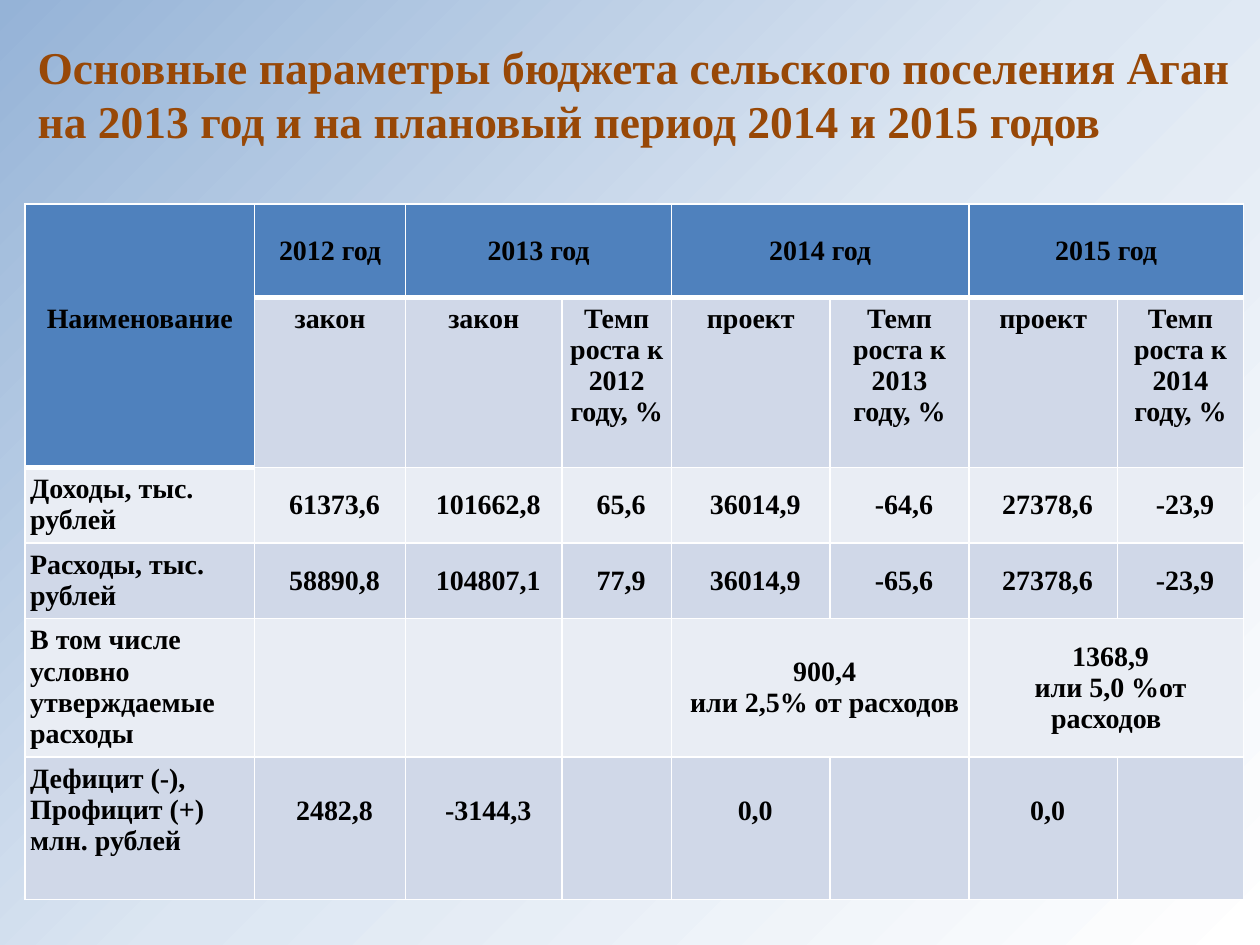
from dataclasses import dataclass

from lxml.etree import SubElement
from pptx import Presentation
from pptx.dml.color import RGBColor
from pptx.enum.text import MSO_ANCHOR, PP_ALIGN
from pptx.oxml import parse_xml
from pptx.oxml.ns import nsdecls, qn
from pptx.slide import Slide
from pptx.table import Table, _Cell
from pptx.text.text import TextFrame
from pptx.util import Inches, Pt

FONT = "Times New Roman"
WHITE = RGBColor(0xFF, 0xFF, 0xFF)
BLACK = RGBColor(0, 0, 0)
BROWN = RGBColor(0x98, 0x48, 0x07)
HEADER_BLUE = RGBColor(0x4F, 0x81, 0xBD)
BAND_DARK = RGBColor(0xD0, 0xD8, 0xE8)
BAND_LIGHT = RGBColor(0xE9, 0xED, 0xF4)
SKY_PALE = RGBColor(0xDC, 0xE6, 0xF2)
SKY_DEEP = RGBColor(0x95, 0xB3, 0xD7)

COLUMNS = (1.82, 1.2, 1.24, 0.87, 1.26, 1.1, 1.18, 1)
ROWS = (0.74, 1.35, 0.6, 0.6, 1.1, 1.13)
TITLE = ("Основные параметры бюджета сельского поселения Аган "
         "на 2013 год и на плановый период 2014 и 2015 годов")


@dataclass(frozen=True)
class CellStyle:
    side: float = 0.1
    top: float = 0.05
    bottom: float = 0.05
    anchor: MSO_ANCHOR = MSO_ANCHOR.TOP
    align: PP_ALIGN = PP_ALIGN.CENTER
    indent: float = 0


@dataclass(frozen=True)
class Entry:
    row: int
    column: int
    text: str
    style: CellStyle
    row_span: int = 1
    column_span: int = 1


CORNER = CellStyle(top=0.79)
YEAR = CellStyle(anchor=MSO_ANCHOR.MIDDLE)
SUBHEADING = CellStyle(side=0.04)
WIDE_INSET = CellStyle()
LABEL = CellStyle(side=0.04, align=PP_ALIGN.LEFT)
FIGURE = CellStyle(side=0.07, top=0, bottom=0, anchor=MSO_ANCHOR.MIDDLE, indent=0.07)
BALANCE = CellStyle(top=0.3, indent=0.07)

SUBHEADINGS = ("закон", "закон", "Темп роста к 2012 году, %", "проект",
               "Темп роста к 2013 году, %", "проект", "Темп роста к 2014 году, %")
INCOME = ("61373,6", "101662,8", "65,6", "36014,9", "-64,6", "27378,6", "-23,9")
EXPENSES = ("58890,8", "104807,1", "77,9", "36014,9", "-65,6", "27378,6", "-23,9")
LABELS = ("Доходы, тыс. рублей", "Расходы, тыс. рублей",
          "В том числе условно утверждаемые расходы",
          "Дефицит (-),\nПрофицит (+)\nмлн. рублей")

ENTRIES = [
    Entry(0, 0, "Наименование", CORNER, row_span=2),
    Entry(0, 1, "2012 год", YEAR),
    *(Entry(0, column, f"{year} год", YEAR, column_span=2)
      for column, year in ((2, 2013), (4, 2014), (6, 2015))),
    *(Entry(1, column, text, WIDE_INSET if column in (1, 5) else SUBHEADING)
      for column, text in enumerate(SUBHEADINGS, 1)),
    *(Entry(row, 0, text, LABEL) for row, text in enumerate(LABELS, 2)),
    *(Entry(row, column, text, FIGURE)
      for row, figures in ((2, INCOME), (3, EXPENSES))
      for column, text in enumerate(figures, 1)),
    Entry(4, 4, "900,4\nили 2,5% от расходов", FIGURE, column_span=2),
    Entry(4, 6, "1368,9\nили 5,0 %от расходов", FIGURE, column_span=2),
    *(Entry(5, column, text, BALANCE)
      for column, text in ((1, "2482,8"), (2, "-3144,3"), (4, "0,0"), (6, "0,0"))),
]


def paint_background(slide: Slide) -> None:
    slide.background.fill.gradient()
    gradient = slide.background._cSld.find(".//" + qn("a:gradFill"))
    for part in list(gradient):
        gradient.remove(part)
    stops = SubElement(gradient, qn("a:gsLst"))
    for percent, color in ((0, WHITE), (50, SKY_PALE), (100, SKY_DEEP)):
        stop = SubElement(stops, qn("a:gs"), pos=str(percent * 1000))
        SubElement(stop, qn("a:srgbClr"), val=str(color))
    shade = SubElement(gradient, qn("a:path"), {"path": "circle"})
    SubElement(shade, qn("a:fillToRect"), l="100000", t="100000")


def format_text(frame: TextFrame, size: float, color: RGBColor,
                align: PP_ALIGN, indent: float = 0) -> None:
    for paragraph in frame.paragraphs:
        paragraph.alignment = align
        if indent:
            paragraph._p.get_or_add_pPr().set("indent", str(Inches(indent)))
        for run in paragraph.runs:
            run.font.name = FONT
            run.font.size = Pt(size)
            run.font.bold = True
            run.font.color.rgb = color


def add_title(slide: Slide, width: int, height: int) -> None:
    title = slide.shapes.add_textbox(
        int(width * 0.02), int(height * 0.033), int(width * 0.97), int(height * 0.13))
    frame = title.text_frame
    frame.word_wrap = True
    frame.vertical_anchor = MSO_ANCHOR.BOTTOM
    frame.text = TITLE
    format_text(frame, 26, BROWN, PP_ALIGN.LEFT)


def draw_borders(cell: _Cell, heavy_sides: str) -> None:
    properties = cell._tc.get_or_add_tcPr()
    for position, side in enumerate("LRTB"):
        weight = Pt(3 if side in heavy_sides else 1)
        properties.insert(position, parse_xml(
            f'<a:ln{side} {nsdecls("a")} w="{weight}"><a:solidFill>'
            f'<a:srgbClr val="{WHITE}"/></a:solidFill></a:ln{side}>'))


def paint_cell(table: Table, row: int, column: int) -> None:
    cell = table.cell(row, column)
    last_header_row = 1 if column == 0 else 0
    cell.fill.solid()
    if row <= last_header_row:
        cell.fill.fore_color.rgb = HEADER_BLUE
    else:
        cell.fill.fore_color.rgb = BAND_DARK if row % 2 else BAND_LIGHT
    heavy = {last_header_row: "B", last_header_row + 1: "T"}
    draw_borders(cell, heavy.get(row, ""))


def fill_entry(table: Table, entry: Entry) -> None:
    cell, style = table.cell(entry.row, entry.column), entry.style
    if entry.row_span > 1 or entry.column_span > 1:
        cell.merge(table.cell(entry.row + entry.row_span - 1,
                              entry.column + entry.column_span - 1))
    cell.margin_left = cell.margin_right = Inches(style.side)
    cell.margin_top, cell.margin_bottom = Inches(style.top), Inches(style.bottom)
    cell.vertical_anchor = style.anchor
    cell.text_frame.text = entry.text
    format_text(cell.text_frame, 16, BLACK, style.align, style.indent)


def add_budget_table(slide: Slide, width: int, height: int) -> None:
    table = slide.shapes.add_table(
        len(ROWS), len(COLUMNS), int(width * 0.02), int(height * 0.216),
        Inches(sum(COLUMNS)), Inches(sum(ROWS))).table
    table.first_row = table.horz_banding = False
    for column, column_width in zip(table.columns, COLUMNS):
        column.width = Inches(column_width)
    for row, row_height in zip(table.rows, ROWS):
        row.height = Inches(row_height)
    for row in range(len(ROWS)):
        for column in range(len(COLUMNS)):
            paint_cell(table, row, column)
    for entry in ENTRIES:
        fill_entry(table, entry)


def main() -> None:
    deck = Presentation()
    deck.slide_width, deck.slide_height = Inches(10), Inches(7.5)
    slide = deck.slides.add_slide(deck.slide_layouts[6])
    paint_background(slide)
    add_budget_table(slide, deck.slide_width, deck.slide_height)
    add_title(slide, deck.slide_width, deck.slide_height)
    deck.save("out.pptx")


if __name__ == "__main__":
    main()
